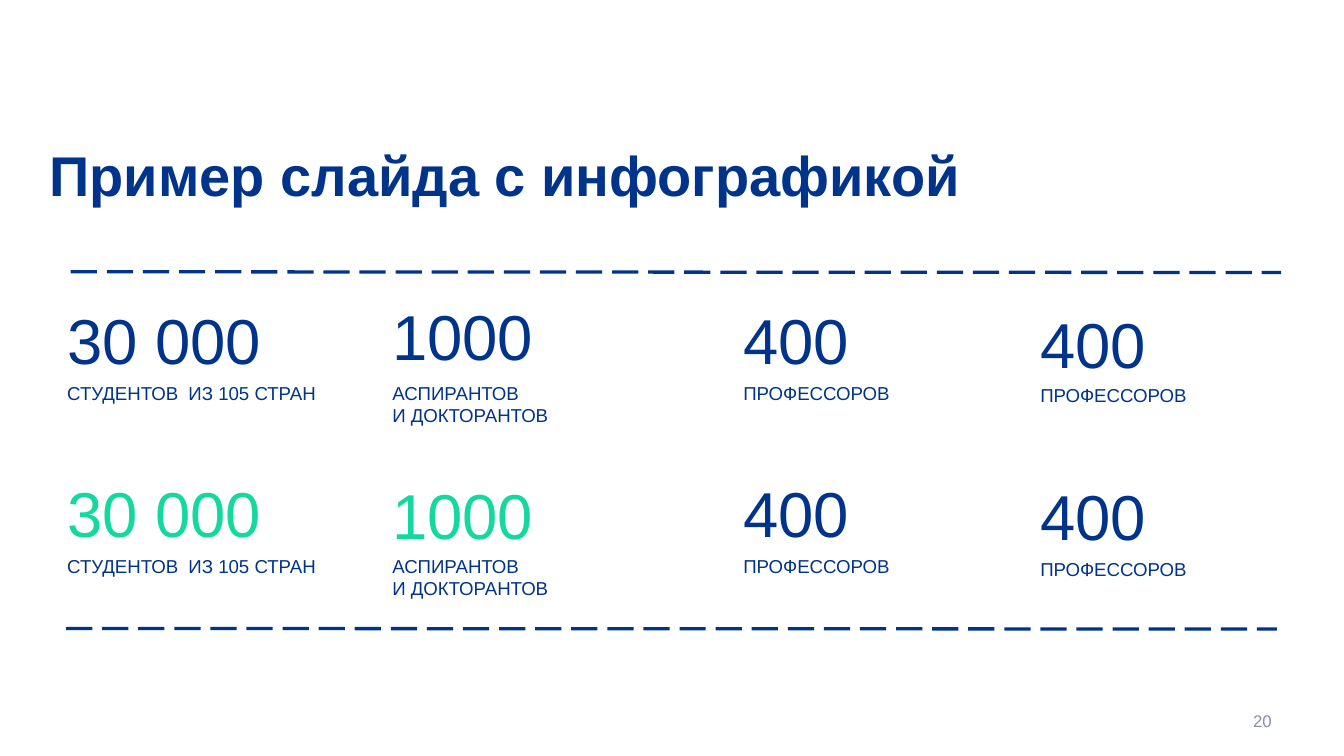
from dataclasses import dataclass

from lxml import etree
from pptx import Presentation
from pptx import util as u
from pptx.dml.color import RGBColor
from pptx.enum import dml, shapes, text
from pptx.oxml.ns import qn

NAVY = RGBColor(0x00, 0x34, 0x8A)
GREEN = RGBColor(0x14, 0xD9, 0x9F)
GREY = RGBColor(0x88, 0x8D, 0xB0)
FONT = "Arial"
ROW_STEP = 92.8


@dataclass(frozen=True)
class Figure:
    """One column of the infographic; lengths in points."""
    number: str
    caption: str
    left: float
    number_tops: tuple[float, float]
    caption_top: float
    number_width: float
    caption_width: float
    caption_height: float
    second_color: RGBColor


FIGURES = (
    Figure("30 000", "СТУДЕНТОВ  ИЗ 105 СТРАН", 36, (161.3, 254.2), 204.5,
           165.6, 171.4, 25.9, GREEN),
    Figure("1000", "АСПИРАНТОВ\vИ ДОКТОРАНТОВ", 210.2, (159.1, 254.9), 204.5,
           151.2, 155.5, 25.9, GREEN),
    Figure("400", "ПРОФЕССОРОВ", 398.2, (161.3, 254.2), 204.5,
           165.6, 171.4, 14.4, NAVY),
    Figure("400", "ПРОФЕССОРОВ", 557.3, (163.4, 255.6), 205.9,
           165.6, 171.4, 14.4, NAVY),
)


def write(shape, content: str, *, size: float, color: RGBColor = NAVY,
          bold: bool = False, align=text.PP_ALIGN.LEFT,
          anchor=text.MSO_ANCHOR.TOP, inset: tuple[float, float] = (0, 0),
          spacing: float = 1.0) -> None:
    frame = shape.text_frame
    frame.word_wrap = True
    frame.auto_size = text.MSO_AUTO_SIZE.NONE
    frame.vertical_anchor = anchor
    frame.margin_left = frame.margin_right = u.Pt(inset[0])
    frame.margin_top = frame.margin_bottom = u.Pt(inset[1])
    paragraph = frame.paragraphs[0]
    paragraph.text = content
    paragraph.alignment = align
    paragraph.line_spacing = spacing
    for run in paragraph.runs:
        run.font.name = FONT
        run.font.size = u.Pt(size)
        run.font.bold = bold
        run.font.color.rgb = color


def add_text(slide, box: tuple[float, float, float, float], content: str,
             **style) -> None:
    write(slide.shapes.add_textbox(*map(u.Pt, box)), content, **style)


def add_figure(slide, figure: Figure, row: int) -> None:
    add_text(slide, (figure.left, figure.number_tops[row],
                     figure.number_width, 54.7), figure.number, size=34,
             color=figure.second_color if row else NAVY)
    add_text(slide, (figure.left, figure.caption_top + row * ROW_STEP,
                     figure.caption_width, figure.caption_height),
             figure.caption, size=10)


def add_rule(slide, left: float, right: float, top: float, end: float) -> None:
    rule = slide.shapes.add_connector(
        shapes.MSO_CONNECTOR.STRAIGHT, *map(u.Pt, (left, top, right, end)))
    rule.line.color.rgb = NAVY
    rule.line.width = u.Pt(1.75)
    rule.line.dash_style = dml.MSO_LINE.LONG_DASH
    etree.SubElement(rule._element.spPr, qn("a:effectLst"))


def main() -> None:
    deck = Presentation()
    deck.slide_width, deck.slide_height = u.Pt(720), u.Pt(405)
    slide = deck.slides.add_slide(deck.slide_layouts[5])

    # Title
    title = slide.shapes.title
    title.left, title.top = u.Pt(23.8), u.Pt(72.7)
    title.width, title.height = u.Pt(648.7), u.Pt(45.4)
    write(title, "Пример слайда с инфографикой", size=30, bold=True,
          anchor=text.MSO_ANCHOR.MIDDLE, inset=(2.7, 1.35), spacing=0.9)

    # Two rows of figures
    for row in range(2):
        for figure in FIGURES:
            add_figure(slide, figure, row)

    # Dashed rules above and below the figures
    add_rule(slide, 37.9, 686.4, 145.6, 146)
    add_rule(slide, 35.4, 684, 336.7, 337)

    # Slide number
    add_text(slide, (508.3, 375.1, 175.7, 21.6), "20", size=9, color=GREY,
             align=text.PP_ALIGN.RIGHT, anchor=text.MSO_ANCHOR.MIDDLE,
             inset=(2.7, 1.35))

    deck.save("out.pptx")


if __name__ == "__main__":
    main()
